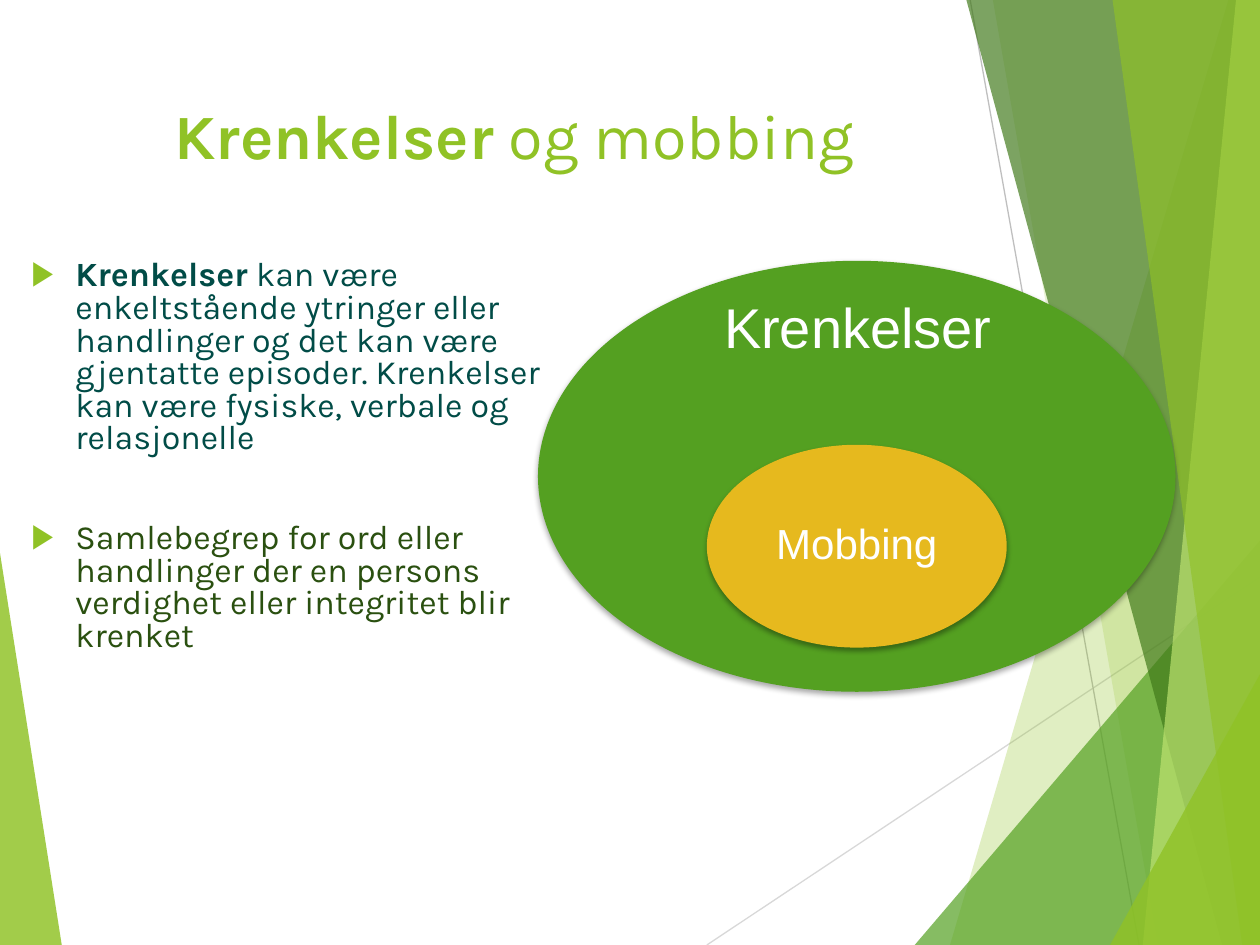
from lxml.etree import SubElement
from pptx import Presentation
from pptx.dml.color import RGBColor
from pptx.enum.shapes import MSO_CONNECTOR as Connector, MSO_SHAPE as Shape
from pptx.enum.text import MSO_ANCHOR as Anchor, PP_ALIGN as Align
from pptx.oxml.ns import qn
from pptx.util import Inches, Pt

LIME = RGBColor(0x90, 0xC2, 0x26)
PALE_LIME = RGBColor(0xBF, 0xE4, 0x71)
GREEN = RGBColor(0x54, 0xA0, 0x21)
DARK_GREEN = RGBColor(0x3F, 0x78, 0x18)
MOSS = RGBColor(0x2A, 0x50, 0x10)
TEAL = RGBColor(0x01, 0x4C, 0x47)
GOLD = RGBColor(0xE6, 0xB9, 0x1E)
LIGHT_GREY = RGBColor(0xD8, 0xD8, 0xD8)
GREY = RGBColor(0xBF, 0xBF, 0xBF)
WHITE = RGBColor(0xFF, 0xFF, 0xFF)

WIDTH, HEIGHT = 10, 7.5

# Text runs: (words, bold)
TITLE = [("Krenkelser", True), (" og mobbing ", False)]
# Bullets: (runs, colour, space before in points)
BULLETS = [
    ([("Krenkelser", True),
      (" kan være enkeltstående ytringer eller handlinger og det kan være "
       "gjentatte episoder. Krenkelser kan være fysiske, verbale og relasjonelle", False)],
     TEAL, 10),
    ([("Samlebegrep for ord eller handlinger der en persons verdighet eller "
       "integritet blir krenket", False)], MOSS, 38.5),
]

# Background: (corners, colour, opacity in percent)
LEFT_FACET = ([(0, 4.39), (0.49, HEIGHT), (0, HEIGHT)], LIME, 83)
LINES = [((5.61, HEIGHT), (WIDTH, 4.58), LIGHT_GREY), ((7.7, 0), (9.04, HEIGHT), GREY)]


def right_facet(top, bottom, colour, opacity, start=0):
    """Facet bounded by a slanted edge and the right side of the slide."""
    return [(top, start), (bottom, HEIGHT), (WIDTH, HEIGHT), (WIDTH, start)], colour, opacity


RIGHT_FACETS = [
    right_facet(9.75, 7.54, LIME, 28),
    right_facet(7.88, 9.19, LIME, 20),
    right_facet(WIDTH, 7.26, GREEN, 70, start=4.29),
    right_facet(7.67, 9.7, DARK_GREEN, 68),
    right_facet(9.81, 9.07, PALE_LIME, 68),
    right_facet(8.83, 9.86, LIME, 63),
    right_facet(WIDTH, 8.81, LIME, 80, start=5.35),
]

# Nested ellipses: (ellipse place, colour, label, label place, inset, size)
ELLIPSES = [
    ((4.27, 2.07, 5.06, 3.42), GREEN, "Krenkelser", (5.48, 2.33, 2.66, 0.58), 0.25, 32),
    ((5.61, 3.53, 2.38, 1.61), GOLD, "Mobbing", (5.96, 3.93, 1.68, 0.81), 0.19, 24),
]

deck = Presentation()
deck.slide_width, deck.slide_height = Inches(WIDTH), Inches(HEIGHT)
page = deck.slides.add_slide(deck.slide_layouts[6])


def add_facet(corners, colour, opacity):
    start, *others = [(Inches(x), Inches(y)) for x, y in corners]
    builder = page.shapes.build_freeform(*start)
    builder.add_line_segments(others, close=True)
    facet = builder.convert_to_shape()
    facet.shadow.inherit = False
    facet.line.fill.background()
    facet.fill.solid()
    facet.fill.fore_color.rgb = colour
    colour_node = facet._element.spPr.find(qn("a:solidFill"))[0]
    SubElement(colour_node, qn("a:alpha"), val=str(opacity * 1000))


def add_line(start, end, colour):
    line = page.shapes.add_connector(Connector.STRAIGHT, *map(Inches, start + end))
    line.line.color.rgb = colour
    line.line.width = Pt(0.75)
    SubElement(line._element.spPr, qn("a:effectLst"))


def add_text_box(place, inset, anchor):
    frame = page.shapes.add_textbox(*map(Inches, place)).text_frame
    frame.word_wrap = True
    frame.vertical_anchor = anchor
    frame.margin_left = frame.margin_right = Inches(inset)
    frame.margin_top = frame.margin_bottom = Inches(inset)
    return frame


def write(para, runs, font, size, colour):
    para.font.name, para.font.size = font, Pt(size)
    para.font.color.rgb = colour
    for words, bold in runs:
        span = para.add_run()
        span.text = words
        span.font.bold = bold


def add_bullet(para):
    properties = para._p.get_or_add_pPr()
    properties.set("marL", str(Inches(0.5)))
    properties.set("indent", str(Inches(-0.35)))
    bullet_colour = SubElement(properties, qn("a:buClr"))
    SubElement(bullet_colour, qn("a:srgbClr"), val=str(LIME))
    SubElement(properties, qn("a:buFont"), typeface="Arial")
    SubElement(properties, qn("a:buChar"), char="▶")


def add_ellipse(place, colour):
    ellipse = page.shapes.add_shape(Shape.OVAL, *map(Inches, place))
    ellipse.fill.solid()
    ellipse.fill.fore_color.rgb = colour
    ellipse.line.fill.background()
    # Soft shadow straight below
    ellipse.shadow.inherit = False
    effects = ellipse._element.spPr.find(qn("a:effectLst"))
    shadow = SubElement(effects, qn("a:outerShdw"), blurRad=str(Pt(3.1)),
                        dist=str(Pt(1.8)), dir="5400000", rotWithShape="0")
    shadow_colour = SubElement(shadow, qn("a:srgbClr"), val="000000")
    SubElement(shadow_colour, qn("a:alpha"), val="35000")


# Background
add_facet(*LEFT_FACET)
for line in LINES:
    add_line(*line)
for facet in RIGHT_FACETS:
    add_facet(*facet)

# Title
title = add_text_box((0.67, 0.67, 6.94, 1.44), 0.1, Anchor.TOP).paragraphs[0]
title.alignment = Align.CENTER
write(title, TITLE, "Karla", 36, LIME)

# Bullets
body = add_text_box((0, 1.97, 4.78, 3.57), 0.1, Anchor.TOP)
for index, (runs, colour, space) in enumerate(BULLETS):
    para = body.add_paragraph() if index else body.paragraphs[0]
    para.line_spacing = 0.8
    para.space_before = Pt(space)
    add_bullet(para)
    write(para, runs, "Karla", 19.4, colour)

# Nested ellipses with labels
for place, colour, label, label_place, inset, size in ELLIPSES:
    add_ellipse(place, colour)
    para = add_text_box(label_place, inset, Anchor.MIDDLE).paragraphs[0]
    para.alignment = Align.CENTER
    para.line_spacing = 0.9
    write(para, [(label, False)], "Arial", size, WHITE)

deck.save("out.pptx")
